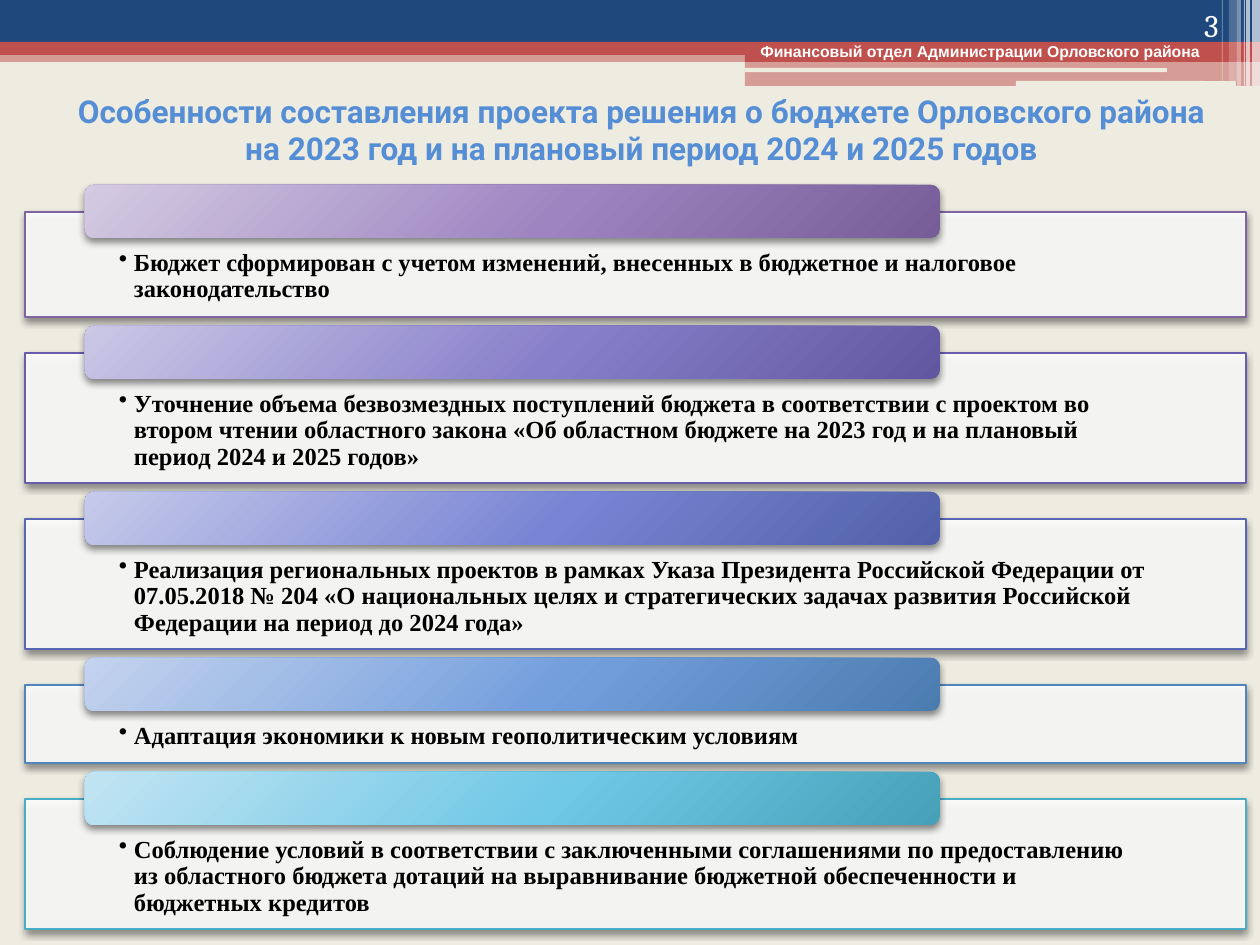
import pptx
import pptx.dml.color
import pptx.enum.shapes
import pptx.enum.text
import pptx.oxml
import pptx.oxml.ns
import pptx.util
from lxml import etree

THEME = {
    "background": "EEECE1", "navy": "1F497D", "red": "C0504D",
    "white": "FFFFFF", "black": "000000", "title": "558ED5",
    "sizes": {"department": 9, "body": 14, "title": 18, "number": 18},
}
SIZES = THEME["sizes"]
ALIGN = pptx.enum.text.PP_ALIGN
ANCHOR = pptx.enum.text.MSO_ANCHOR
SHAPE = pptx.enum.shapes.MSO_SHAPE
DRAWING = f'xmlns:a="{pptx.oxml.ns.nsuri("a")}"'
QN = pptx.oxml.ns.qn
RGB = pptx.dml.color.RGBColor.from_string
PX = 914400 / 126

presentation = pptx.Presentation()
presentation.slide_width, presentation.slide_height = round(1260 * PX), round(945 * PX)
slide = presentation.slides.add_slide(presentation.slide_layouts[6])
slide.background.fill.solid()
slide.background.fill.fore_color.rgb = RGB(THEME["background"])


def add_block(kind, box, color, opacity=100, shadow=False):
    """Add a borderless shape; box is left, top, width, height in px."""
    shape = slide.shapes.add_shape(kind, *(round(value * PX) for value in box))
    shape.shadow.inherit = False
    shape.line.fill.background()
    shape.fill.solid()
    shape.fill.fore_color.rgb = RGB(color)
    properties = shape._element.spPr
    if opacity < 100:
        fill_color = properties.find(QN("a:solidFill"))[0]
        etree.SubElement(fill_color, QN("a:alpha"), val=str(opacity * 1000))
    if shadow:
        properties.find(QN("a:effectLst")).append(pptx.oxml.parse_xml(
            f'<a:outerShdw {DRAWING} blurRad="50800" dist="25400" dir="5400000" rotWithShape="0">'
            f'<a:srgbClr val="{THEME["black"]}"><a:alpha val="45000"/></a:srgbClr></a:outerShdw>'))
    return shape


def write(shape, text, font, size, color, bold=True, align=ALIGN.LEFT, anchor=ANCHOR.TOP):
    frame = shape.text_frame
    frame.word_wrap = True
    frame.vertical_anchor = anchor
    paragraph = frame.paragraphs[0]
    paragraph.alignment = align
    run = paragraph.add_run()
    run.text = text
    formats = {"name": font, "size": pptx.util.Pt(size), "bold": bold}
    for name, value in formats.items():
        setattr(run.font, name, value)
    run.font.color.rgb = RGB(color)
    return paragraph


# Header bands and the vertical strips at the right edge
for kind, box, color, opacity in [
    (SHAPE.RECTANGLE, (0, 50, 1260, 12), "red", 50),
    (SHAPE.RECTANGLE, (0, 0, 1260, 43), "navy", 100),
    (SHAPE.RECTANGLE, (0, 42, 1260, 13), "red", 100),
    (SHAPE.RECTANGLE, (745, 49, 515, 13), "red", 100),
    (SHAPE.RECTANGLE, (745, 61, 515, 25), "red", 50),
    (SHAPE.ROUNDED_RECTANGLE, (745, 68, 422, 4), "background", 100),
    (SHAPE.ROUNDED_RECTANGLE, (1016, 81, 220, 5), "background", 100),
]:
    add_block(kind, box, THEME[color], opacity)

for left, width, height, opacity in [
    (1252, 8, 86, 65), (1246, 4, 86, 65), (1244, 1, 86, 60),
    (1237, 4, 86, 40), (1229, 8, 81, 20), (1222, 1, 81, 30),
]:
    add_block(SHAPE.RECTANGLE, (left, 0, width, height), THEME["white"], opacity)

# Department, title and page number
for box, text, font, size, color, bold, align, anchor in [
    ((748, 36, 493, 32), "Финансовый отдел Администрации Орловского района",
     "Arial", "department", "white", True, ALIGN.LEFT, ANCHOR.TOP),
    ((64, 66, 1155, 127),
     "Особенности составления проекта решения о бюджете Орловского района "
     "на 2023 год и на плановый период 2024 и 2025 годов",
     "Roboto", "title", "title", True, ALIGN.CENTER, ANCHOR.MIDDLE),
    ((1126, 0, 105, 50), "3", "Cambria", "number", "white", False, ALIGN.RIGHT, ANCHOR.BOTTOM),
]:
    text_box = slide.shapes.add_textbox(*(round(value * PX) for value in box))
    write(text_box, text, font, SIZES[size], THEME[color], bold, align, anchor)

# Panels: outline colour, gradient of the tab, panel height, text
panels = [
    ("8064A2", ("D4CBE2", "9E85C1", "775D97"), 105,
     "Бюджет сформирован с учетом изменений, внесенных в бюджетное и налоговое законодательство"),
    ("685DAB", ("CBC8E6", "887FCA", "6157A0"), 130,
     "Уточнение объема безвозмездных поступлений бюджета в соответствии с проектом во втором "
     "чтении областного закона «Об областном бюджете на 2023 год и на плановый период "
     "2024 и 2025 годов»"),
    ("5767B4", ("C6CAEA", "7985D4", "5160A8"), 130,
     "Реализация региональных проектов в рамках Указа Президента Российской Федерации от "
     "07.05.2018 № 204 «О национальных целях и стратегических задачах развития Российской "
     "Федерации на период до 2024 года»"),
    ("5185BD", ("C4D3EE", "749FDD", "4B7CB0"), 78,
     "Адаптация экономики к новым геополитическим условиям"),
    ("4BACC6", ("C2E4F2", "6FC8E6", "46A0B8"), 130,
     "Соблюдение условий в соответствии с заключенными соглашениями по предоставлению из "
     "областного бюджета дотаций на выравнивание бюджетной обеспеченности и бюджетных кредитов"),
]
TAB_HEIGHT, TAB_RISE, PANEL_GAP = 53, 27, 9
INSETS = {"margin_left": 94, "margin_top": 38, "margin_right": 94, "margin_bottom": 14}
tab_top = 185
for outline, gradient, height, text in panels:
    panel_top = tab_top + TAB_RISE
    panel = add_block(SHAPE.RECTANGLE, (25, panel_top, 1221, height), THEME["white"], 90, True)
    panel.line.color.rgb = RGB(outline)
    panel.line.width = pptx.util.Pt(0.75)
    for name, value in INSETS.items():
        setattr(panel.text_frame, name, round(value * PX))
    paragraph = write(panel, text, "Times New Roman", SIZES["body"], THEME["black"])
    paragraph.line_spacing = 0.9
    indent = round(15 * PX)
    paragraph_properties = paragraph._p.get_or_add_pPr()
    paragraph_properties.set("marL", str(indent))
    paragraph_properties.set("indent", str(-indent))
    etree.SubElement(paragraph_properties, QN("a:buChar"), char="•")

    tab = add_block(SHAPE.ROUNDED_RECTANGLE, (85, tab_top, 855, TAB_HEIGHT), gradient[0], shadow=True)
    stops = "".join(f'<a:gs pos="{position * 1000}"><a:srgbClr val="{color}"/></a:gs>'
                    for position, color in zip((0, 55, 100), gradient))
    solid_fill = tab._element.spPr.find(QN("a:solidFill"))
    solid_fill.getparent().replace(solid_fill, pptx.oxml.parse_xml(
        f'<a:gradFill {DRAWING} rotWithShape="1"><a:gsLst>{stops}</a:gsLst><a:path path="circle">'
        '<a:fillToRect l="-40000" t="-90000" r="140000" b="190000"/></a:path></a:gradFill>'))
    tab_top = panel_top + height + PANEL_GAP

presentation.save("out.pptx")
